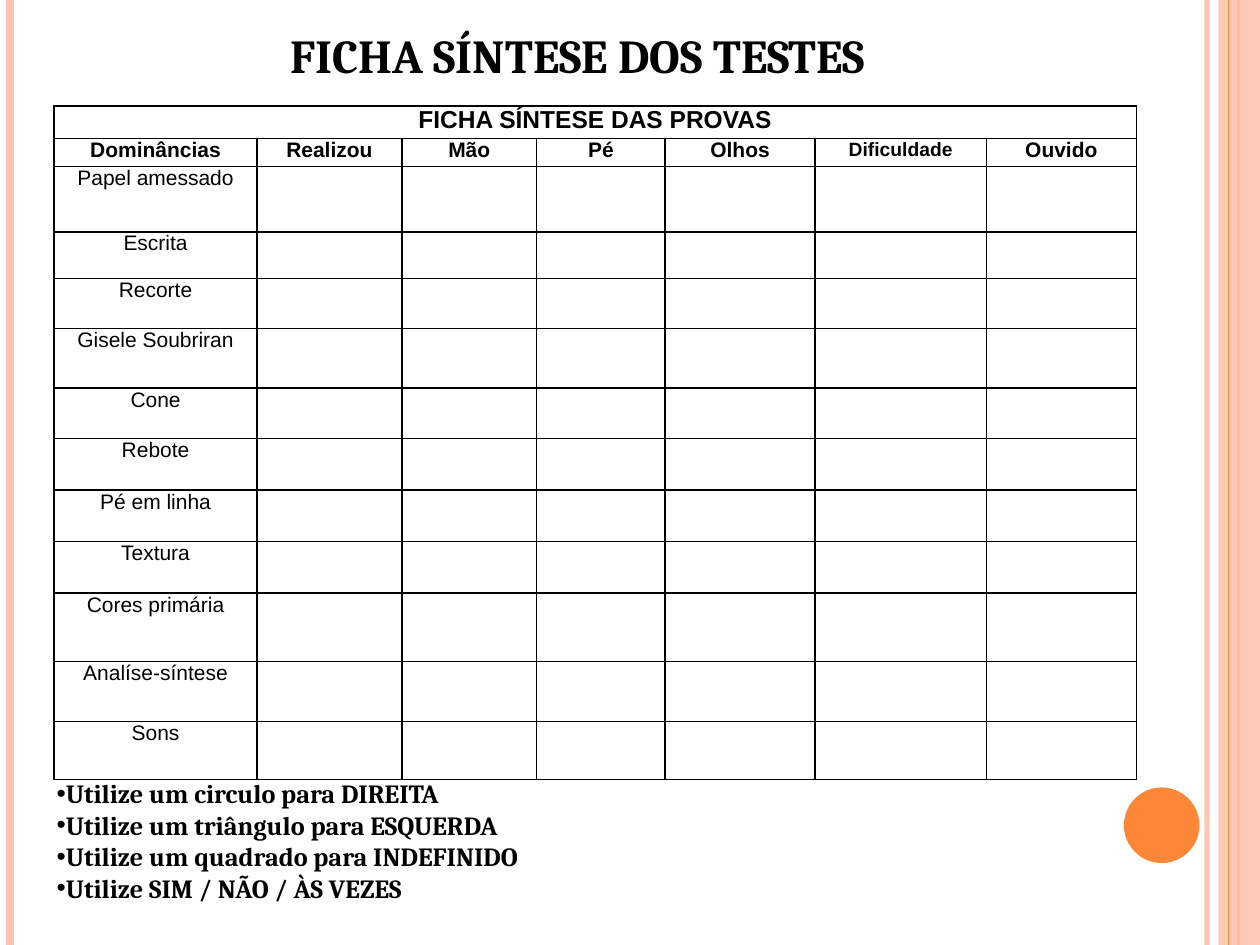
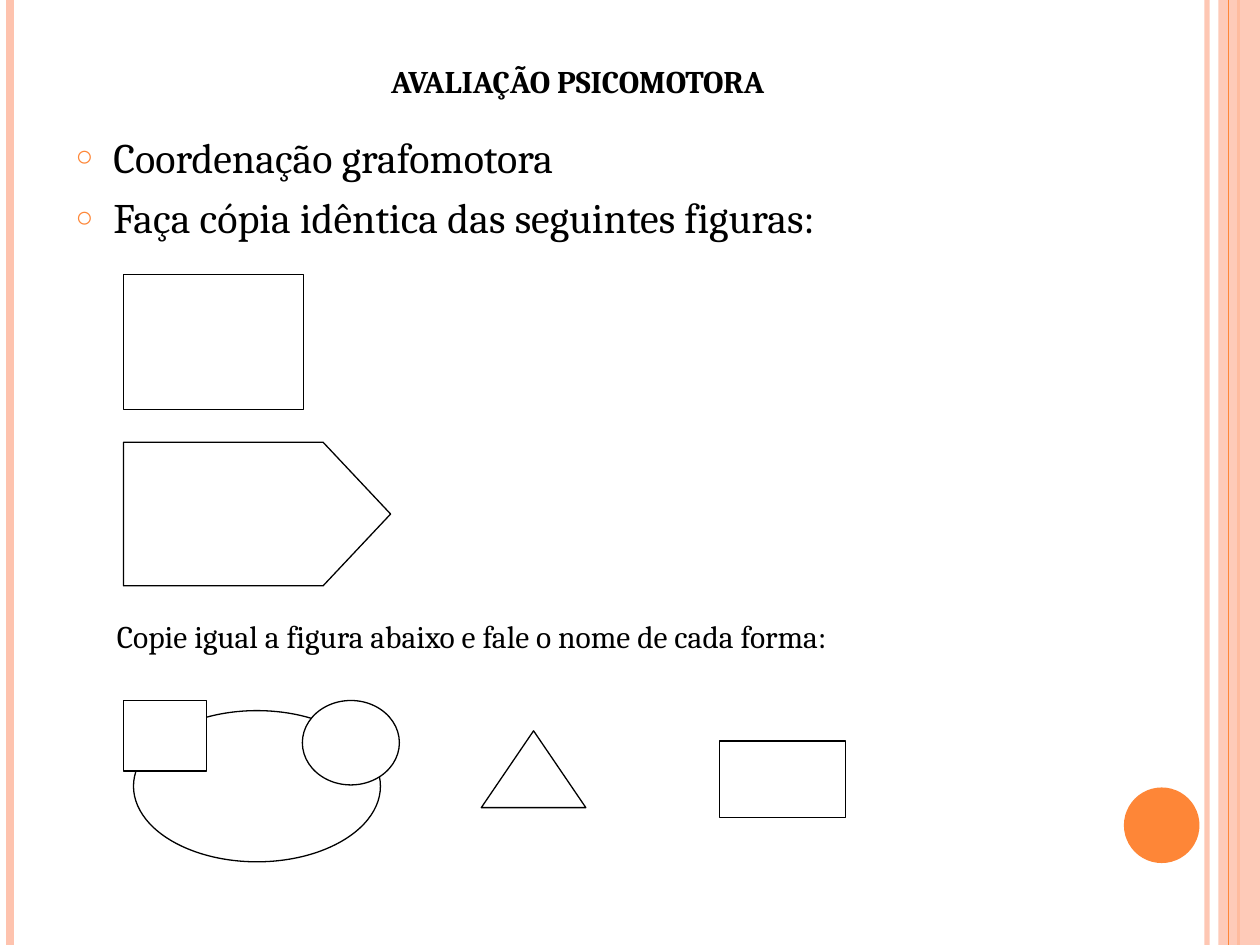
"""Build two slides for a psychomotor assessment: a results table and figures to copy."""
import pptx
import pptx.dml.color
import pptx.enum.shapes
import pptx.enum.text
import pptx.oxml
import pptx.oxml.ns
import pptx.util
from lxml import etree

Inches = pptx.util.Inches
Pt = pptx.util.Pt
qn = pptx.oxml.ns.qn
SHAPE = pptx.enum.shapes.MSO_SHAPE
ANCHOR = pptx.enum.text.MSO_ANCHOR
CENTER = pptx.enum.text.PP_ALIGN.CENTER
LEFT = pptx.enum.text.PP_ALIGN.LEFT

BLACK, WHITE, ORANGE, PEACH = "000000", "FFFFFF", "FE8637", "FEC3AE"
SLIDE_WIDTH, SLIDE_HEIGHT = 10, 7.5

BAND_LINES = [(9.58, PEACH, 3, 93), (0.08, PEACH, 4.5, 100),
              (9.83, ORANGE, 1.5, 100), (9.75, ORANGE, 0.75, 100)]
SIDE_BAND = (9.67, 0, 0.33, SLIDE_HEIGHT)
CORNER_DOT = (8.92, 6.25, 0.6, 0.6)

SUMMARY = {
    "title": "FICHA SÍNTESE DOS TESTES", "title_size": 27, "title_at": (0.5, 0.1, 8.17, 0.61),
    "list": ["Utilize um circulo para DIREITA", "Utilize um triângulo para ESQUERDA",
             "Utilize um quadrado para INDEFINIDO", "Utilize SIM / NÃO / ÀS VEZES"],
    "list_at": (0.35, 6.05, 4.96, 1.17), "anchor": ANCHOR.BOTTOM,
    "list_format": dict(size=15, bold=True, bullet="•"),
}
COPYING = {
    "title": "AVALIAÇÃO PSICOMOTORA", "title_size": 18, "title_at": (0.5, 0.3, 8.17, 0.54),
    "list": ["Coordenação grafomotora", "Faça cópia idêntica das seguintes figuras:"],
    "list_at": (0.5, 0.99, 8.17, 0.94), "anchor": ANCHOR.TOP,
    "list_format": dict(size=24, bullet="○", bullet_color=ORANGE, bullet_size=70,
                        indent=0.3, before=6),
}

TABLE_AT = (0.43, 0.84, 8.58, 5.35)
TABLE_TITLE = "FICHA SÍNTESE DAS PROVAS"
TABLE_COLUMNS = [("Dominâncias", 1.61), ("Realizou", 1.15), ("Mão", 1.07), ("Pé", 1.02),
                 ("Olhos", 1.19), ("Dificuldade", 1.36), ("Ouvido", 1.19)]
HEADING_HEIGHTS = [0.26, 0.22]
TESTS = [("Papel amessado", 0.52), ("Escrita", 0.37), ("Recorte", 0.4),
         ("Gisele Soubriran", 0.47), ("Cone", 0.4), ("Rebote", 0.41), ("Pé em linha", 0.41),
         ("Textura", 0.41), ("Cores primária", 0.54), ("Analíse-síntese", 0.48), ("Sons", 0.46)]

INSTRUCTION = "Copie igual a figura abaixo e fale o nome de cada forma:"
INSTRUCTION_AT = (0.83, 4.85, 7.56, 0.4)
FIGURES = [
    (SHAPE.RECTANGLE, (0.98, 2.18, 1.43, 1.07)),
    (SHAPE.PENTAGON, (0.98, 3.51, 2.12, 1.14)),
    (SHAPE.OVAL, (1.06, 5.64, 1.96, 1.2)),
    (SHAPE.RECTANGLE, (0.98, 5.56, 0.66, 0.56)),
    (SHAPE.OVAL, (2.4, 5.56, 0.77, 0.67)),
    (SHAPE.ISOSCELES_TRIANGLE, (3.82, 5.8, 0.83, 0.61)),
    (SHAPE.RECTANGLE, (5.71, 5.88, 1, 0.61)),
]
ARROW_POINT = 0.47


def color(value):
    return pptx.dml.color.RGBColor.from_string(value)


def box(at):
    return [Inches(length) for length in at]


def set_opacity(shape, percent):
    for element in shape._element.spPr.iter(qn("a:srgbClr")):
        etree.SubElement(element, qn("a:alpha"), val=str(percent * 1000))


def add_bullet(paragraph, bullet, bullet_color, bullet_size, indent):
    properties = paragraph._p.get_or_add_pPr()
    properties.set("marL", str(Inches(indent)))
    properties.set("indent", str(-Inches(indent)))
    tint = etree.SubElement(properties, qn("a:buClr"))
    etree.SubElement(tint, qn("a:srgbClr"), val=bullet_color)
    etree.SubElement(properties, qn("a:buSzPct"), val=str(bullet_size * 1000))
    etree.SubElement(properties, qn("a:buFont"), typeface="Arial")
    etree.SubElement(properties, qn("a:buChar"), char=bullet)


def write(frame, texts, size=18, font="Cambria", bold=False, align=LEFT, before=0,
          bullet=None, bullet_color=BLACK, bullet_size=100, indent=0):
    frame.word_wrap = True
    for index, text in enumerate(texts):
        paragraph = frame.add_paragraph() if index else frame.paragraphs[0]
        paragraph.alignment = align
        paragraph.space_before = Pt(before)
        if bullet:
            add_bullet(paragraph, bullet, bullet_color, bullet_size, indent)
        run = paragraph.add_run()
        run.text = text
        run.font.name, run.font.size, run.font.bold = font, Pt(size), bold
        run.font.color.rgb = color(BLACK)


def add_figure(slide, kind, at, fill, line=None):
    shape = slide.shapes.add_shape(kind, *box(at))
    shape.shadow.inherit = False
    shape.fill.solid()
    shape.fill.fore_color.rgb = color(fill)
    if line:
        shape.line.color.rgb = color(line)
        shape.line.width = Pt(0.75)
    else:
        shape.line.fill.background()
    return shape


def add_band_line(slide, x, line_color, width, opacity):
    connector = slide.shapes.add_connector(
        pptx.enum.shapes.MSO_CONNECTOR.STRAIGHT, *box((x, 0, x, SLIDE_HEIGHT)))
    connector.line.color.rgb = color(line_color)
    connector.line.width = Pt(width)
    etree.SubElement(connector._element.spPr, qn("a:effectLst"))
    if opacity < 100:
        set_opacity(connector, opacity)


def fill_placeholder(shape, at, anchor, texts, **text_format):
    shape.left, shape.top, shape.width, shape.height = box(at)
    shape.text_frame.auto_size = pptx.enum.text.MSO_AUTO_SIZE.NONE
    shape.text_frame.vertical_anchor = anchor
    write(shape.text_frame, texts, **text_format)


def add_slide(presentation, content):
    slide = presentation.slides.add_slide(presentation.slide_layouts[1])
    *edge_lines, inner_line = BAND_LINES
    for band_line in edge_lines:
        add_band_line(slide, *band_line)
    set_opacity(add_figure(slide, SHAPE.RECTANGLE, SIDE_BAND, PEACH), 87)
    add_band_line(slide, *inner_line)
    add_figure(slide, SHAPE.OVAL, CORNER_DOT, ORANGE)
    fill_placeholder(slide.shapes.title, content["title_at"], ANCHOR.BOTTOM, [content["title"]],
                     size=content["title_size"], bold=True, align=CENTER)
    fill_placeholder(slide.placeholders[1], content["list_at"], content["anchor"],
                     content["list"], **content["list_format"])
    return slide


def format_cell(cell):
    cell.fill.background()
    cell.margin_left = cell.margin_right = Inches(0.07)
    cell.margin_top = cell.margin_bottom = 0
    properties = cell._tc.get_or_add_tcPr()
    for position, side in enumerate(("lnL", "lnR", "lnT", "lnB")):
        border = etree.Element(qn("a:" + side), w=str(Pt(1)))
        fill = etree.SubElement(border, qn("a:solidFill"))
        etree.SubElement(fill, qn("a:srgbClr"), val=BLACK)
        properties.insert(position, border)


def add_results_table(slide):
    heights = HEADING_HEIGHTS + [height for _, height in TESTS]
    table = slide.shapes.add_table(len(heights), len(TABLE_COLUMNS), *box(TABLE_AT)).table
    for row, height in zip(table.rows, heights):
        row.height = Inches(height)
    for cell in table.iter_cells():
        format_cell(cell)
    table.cell(0, 0).merge(table.cell(0, len(TABLE_COLUMNS) - 1))
    cell_format = dict(font="Arial", align=CENTER)
    write(table.cell(0, 0).text_frame, [TABLE_TITLE], size=14, bold=True, **cell_format)
    for index, (heading, width) in enumerate(TABLE_COLUMNS):
        table.columns[index].width = Inches(width)
        size = 11 if heading == "Dificuldade" else 12
        write(table.cell(1, index).text_frame, [heading], size=size, bold=True, **cell_format)
    for index, (test, _) in enumerate(TESTS, len(HEADING_HEIGHTS)):
        write(table.cell(index, 0).text_frame, [test], size=12, **cell_format)


def add_figures_to_copy(slide):
    for kind, at in FIGURES:
        shape = add_figure(slide, kind, at, WHITE, BLACK)
        if kind == SHAPE.PENTAGON:
            shape.adjustments[0] = ARROW_POINT
    instruction = slide.shapes.add_textbox(*box(INSTRUCTION_AT))
    write(instruction.text_frame, [INSTRUCTION])


def main():
    presentation = pptx.Presentation()
    presentation.slide_width = Inches(SLIDE_WIDTH)
    presentation.slide_height = Inches(SLIDE_HEIGHT)
    add_results_table(add_slide(presentation, SUMMARY))
    add_figures_to_copy(add_slide(presentation, COPYING))
    presentation.save("out.pptx")


if __name__ == "__main__":
    main()
